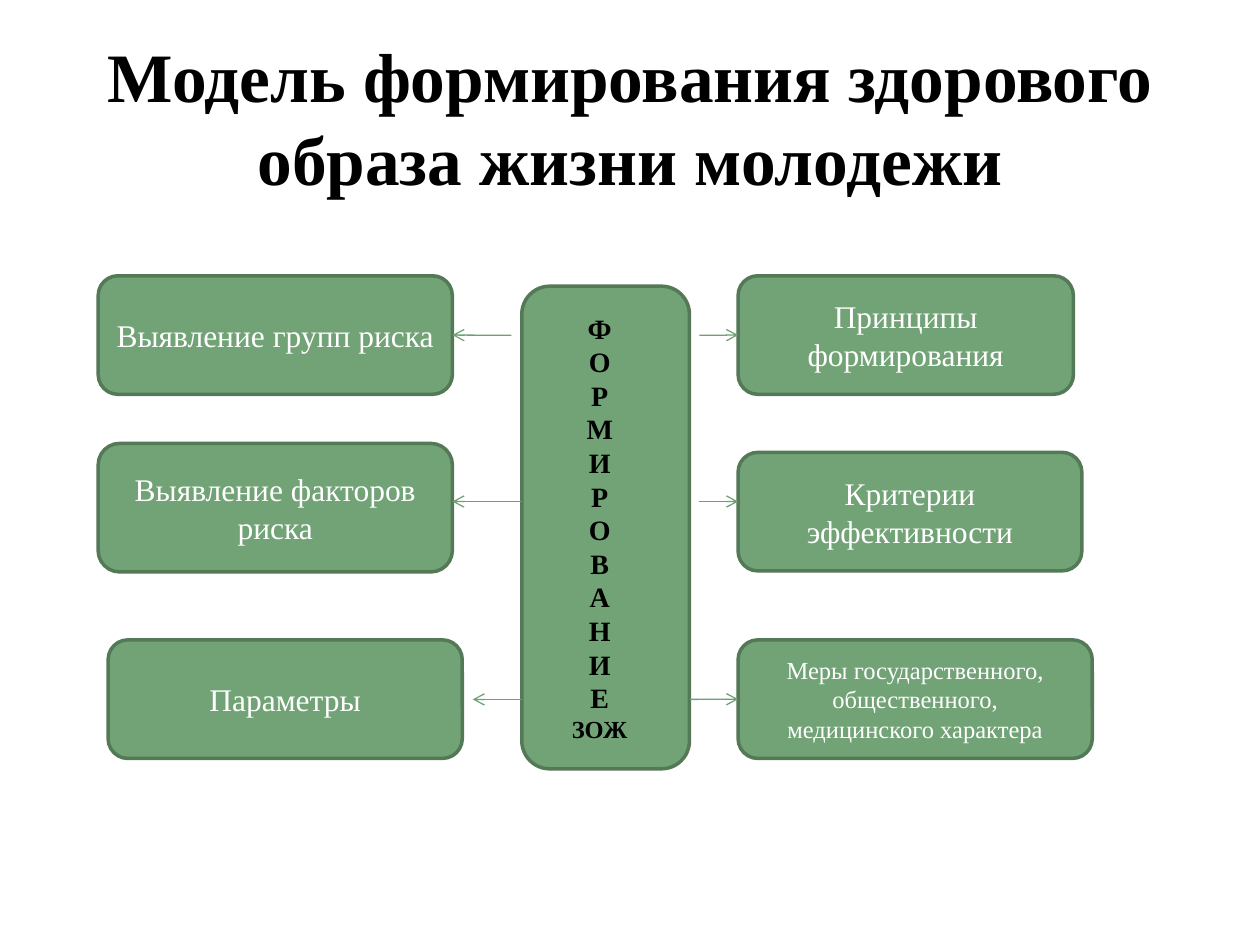
from lxml import etree
from pptx import Presentation
from pptx.dml.color import RGBColor
from pptx.enum.shapes import MSO_CONNECTOR, MSO_SHAPE
from pptx.enum.text import MSO_ANCHOR, MSO_AUTO_SIZE, PP_ALIGN
from pptx.oxml.ns import qn
from pptx.util import Cm, Pt

FONT = "Times New Roman"
COLORS = {
    "fill": "72A376",
    "outline": "547957",
    "arrow": "6EA172",
    "light": "FFFFFF",
    "dark": "000000",
}
LEFT_SITE, RIGHT_SITE = 1, 3
ARROW_LEVELS = (1.2, 4.55, 8.54)


def color(name):
    return RGBColor.from_string(COLORS[name])


def format_paragraph(paragraph, size, color_name, bold=False):
    paragraph.alignment = PP_ALIGN.CENTER
    paragraph.font.name = FONT
    paragraph.font.size = Pt(size)
    paragraph.font.bold = bold
    paragraph.font.color.rgb = color(color_name)


def add_panel(slide, left, top, width, height, text="", size=18):
    shape = slide.shapes.add_shape(
        MSO_SHAPE.ROUNDED_RECTANGLE, Cm(left), Cm(top), Cm(width), Cm(height))
    shape.shadow.inherit = False
    shape.fill.solid()
    shape.fill.fore_color.rgb = color("fill")
    shape.line.color.rgb = color("outline")
    shape.line.width = Pt(2)
    if text:
        frame = shape.text_frame
        frame.word_wrap = True
        frame.vertical_anchor = MSO_ANCHOR.MIDDLE
        frame.text = text
        format_paragraph(frame.paragraphs[0], size, "light")
    return shape


def add_arrow(slide, start, end, level):
    arrow = slide.shapes.add_connector(
        MSO_CONNECTOR.STRAIGHT, Cm(start), Cm(level), Cm(end), Cm(level))
    arrow.line.color.rgb = color("arrow")
    arrow.line.width = Pt(0.75)
    line = arrow.line._get_or_add_ln()
    etree.SubElement(line, qn("a:tailEnd"), type="arrow")
    etree.SubElement(arrow._element.spPr, qn("a:effectLst"))
    return arrow


def add_title(slide, left, top, width, height):
    title = slide.shapes.title
    title.left, title.top = Cm(left), Cm(top)
    title.width, title.height = Cm(width), Cm(height)
    frame = title.text_frame
    frame.text = "Модель формирования здорового образа жизни молодежи"
    frame.word_wrap = True
    frame.vertical_anchor = MSO_ANCHOR.MIDDLE
    format_paragraph(frame.paragraphs[0], 39.6, "dark", bold=True)


def add_center(slide, left, top, width, height):
    panel = add_panel(slide, left, top, width, height)
    label = slide.shapes.add_textbox(
        Cm(left + 0.58), Cm(top + 0.38), Cm(1.98), Cm(height - 0.66))
    frame = label.text_frame
    frame.word_wrap = True
    frame.auto_size = MSO_AUTO_SIZE.SHAPE_TO_FIT_TEXT
    lines = [*"ФОРМИРОВАНИЕ", "ЗОЖ"]
    frame.text = "\n".join(lines)
    for paragraph, line in zip(frame.paragraphs, lines):
        format_paragraph(paragraph, 16 if len(line) == 1 else 14, "dark", bold=True)
    return panel


def add_side(slide, left, top, items, site, center):
    center_site = RIGHT_SITE if site == LEFT_SITE else LEFT_SITE
    for (text, size, box, start, end, joined), level in zip(items, ARROW_LEVELS):
        x, y, width, height = box
        panel = add_panel(slide, left + x, top + y, width, height, text, size)
        arrow = add_arrow(slide, left + start, left + end, top + level)
        if joined:
            arrow.end_connect(panel, site)


def main():
    presentation = Presentation()
    presentation.slide_width, presentation.slide_height = Cm(25.4), Cm(19.05)
    slide = presentation.slides.add_slide(presentation.slide_layouts[5])

    add_title(slide, 1.27, 0.76, 22.86, 3.18)
    center = add_center(slide, 10.52, 5.77, 3.38, 9.73)
    left_items = [
        ("Выявление групп риска", 18, (0, 0, 7.14, 2.39), 8.33, 7.14, True),
        ("Выявление факторов риска", 18, (0, 3.38, 7.14, 2.59), 8.54, 7.14, False),
        ("Параметры", 18, (0.2, 7.34, 7.14, 2.39), 8.54, 7.55, False),
    ]
    right_items = [
        ("Принципы формирования", 18, (0, 0, 6.76, 2.39), -0.78, 0, True),
        ("Критерии эффективности", 18, (0, 3.56, 6.93, 2.39), -0.78, 0, False),
        ("Меры государственного, общественного, медицинского характера", 14,
         (0, 7.34, 7.14, 2.39), -0.98, 0, True),
    ]
    add_side(slide, 1.98, 5.56, left_items, RIGHT_SITE, center)
    add_side(slide, 14.88, 5.56, right_items, LEFT_SITE, center)
    presentation.save("out.pptx")


if __name__ == "__main__":
    main()
